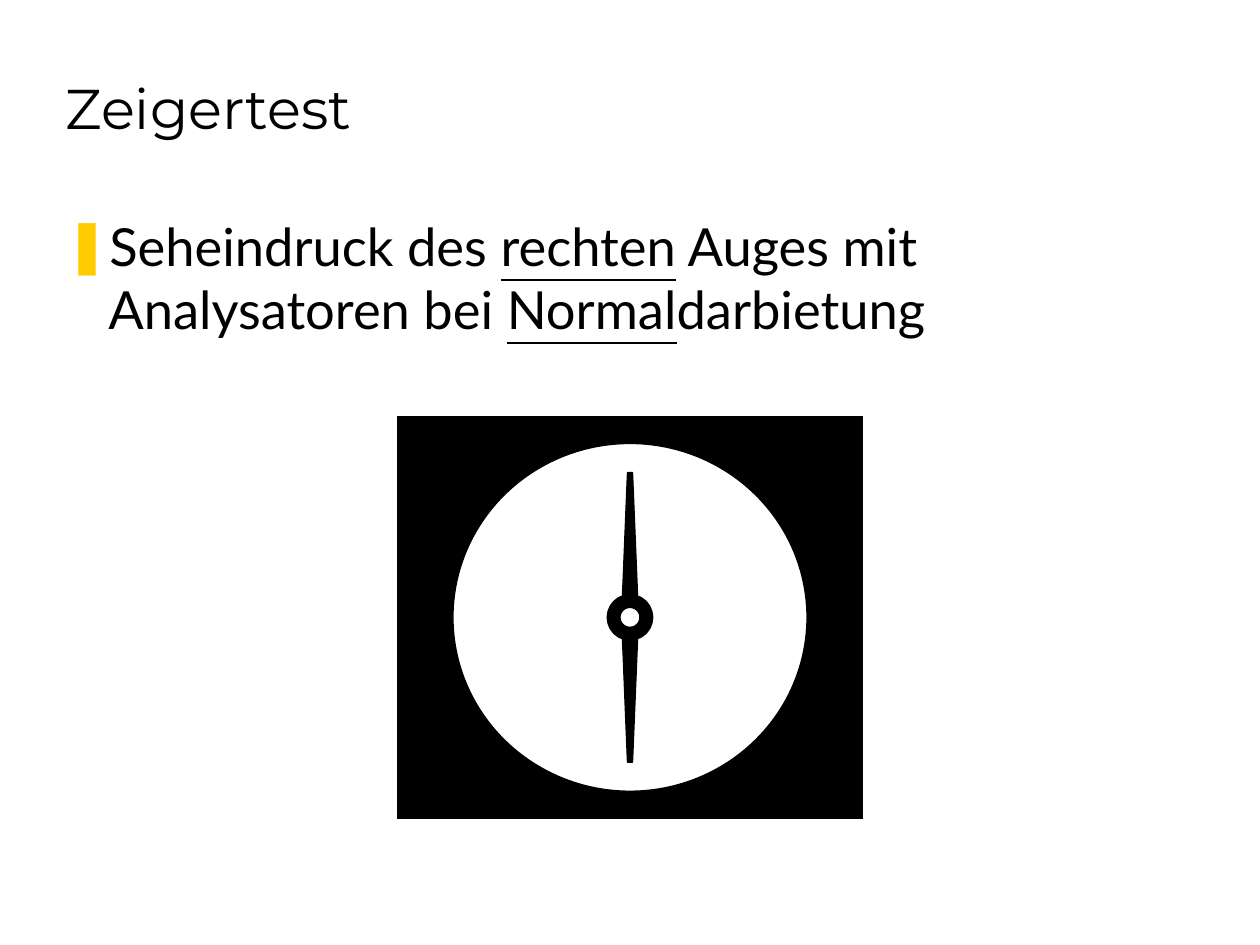
from typing import NamedTuple

from lxml.etree import SubElement
from pptx import Presentation
from pptx.dml.color import RGBColor
from pptx.enum.shapes import MSO_SHAPE as Preset
from pptx.enum.text import MSO_ANCHOR as Anchor, MSO_AUTO_SIZE as AutoSize, PP_ALIGN as Align
from pptx.oxml.ns import qn
from pptx.util import Inches, Pt

COLORS = {"black": "000000", "white": "FFFFFF", "yellow": "FFCC00"}
CENTER_X, CENTER_Y = 5, 4.9

# Upper right quarter of the dial's surround, as offsets from the dial centre
QUARTER = [
    (1.85, 0.01), (1.85, -1.6), (0, -1.6), (0, -1.2), (0.14, -1.19),
    (0.26, -1.17), (0.35, -1.15), (0.45, -1.13), (0.58, -1.09),
    (0.71, -1.03), (0.88, -0.92), (1, -0.81), (1.12, -0.7), (1.2, -0.58),
    (1.3, -0.41), (1.37, -0.21), (1.39, -0.09), (1.39, 0.01),
]
# Upper half of the pointer
NEEDLE = [(-0.06, -0.17), (-0.02, -1.15), (0.02, -1.15), (0.06, -0.17)]


class Outline(NamedTuple):
    preset: Preset
    width: float
    height: float
    fill: str | None
    line: str
    line_width: float


DIAL = Outline(Preset.OVAL, 2.81, 2.76, "white", "black", 0.75)
HUB = Outline(Preset.OVAL, 0.26, 0.26, None, "black", 8)
BORDER = Outline(Preset.RECTANGLE, 3.71, 3.21, None, "white", 0.75)


def color(name: str) -> RGBColor:
    return RGBColor.from_string(COLORS[name])


def style_shape(shape, fill: str | None, line: str, line_width: float) -> None:
    shape.shadow.inherit = False
    if fill:
        shape.fill.solid()
        shape.fill.fore_color.rgb = color(fill)
    else:
        shape.fill.background()
    shape.line.color.rgb = color(line)
    shape.line.width = Pt(line_width)


def add_centered(shapes, outline: Outline) -> None:
    shape = shapes.add_shape(
        outline.preset,
        Inches(CENTER_X - outline.width / 2), Inches(CENTER_Y - outline.height / 2),
        Inches(outline.width), Inches(outline.height),
    )
    style_shape(shape, outline.fill, outline.line, outline.line_width)


def add_mirrored(shapes, offsets: list[tuple[float, float]], sign_x: int, sign_y: int) -> None:
    """Add a black polygon, flipped about the dial centre by the signs."""
    points = [(Inches(CENTER_X + sign_x * x), Inches(CENTER_Y + sign_y * y)) for x, y in offsets]
    builder = shapes.build_freeform(*points[0])
    builder.add_line_segments(points[1:], close=True)
    style_shape(builder.convert_to_shape(), "black", "black", 0.75)


def place(shape, left: float, top: float, width: float, height: float) -> None:
    shape.left, shape.top = Inches(left), Inches(top)
    shape.width, shape.height = Inches(width), Inches(height)


def add_run(paragraph, text: str, font: str, size: float, underline: bool = False) -> None:
    run = paragraph.add_run()
    run.text = text
    run.font.name = font
    run.font.size = Pt(size)
    run.font.underline = underline
    run.font.color.rgb = color("black")


def set_bullet(paragraph, character: str, color_name: str, indent: float) -> None:
    properties = paragraph._p.get_or_add_pPr()
    properties.set("marL", str(Inches(indent)))
    properties.set("indent", str(-Inches(indent)))
    bullet_color = SubElement(properties, qn("a:buClr"))
    SubElement(bullet_color, qn("a:srgbClr"), val=COLORS[color_name])
    SubElement(properties, qn("a:buChar"), char=character)


def fill_title(title) -> None:
    place(title, 0.42, 0.24, 9.16, 0.9)
    frame = title.text_frame
    frame.vertical_anchor = Anchor.BOTTOM
    frame.margin_bottom = Inches(0.02)
    frame.auto_size = AutoSize.NONE
    paragraph = frame.paragraphs[0]
    paragraph.alignment = Align.LEFT
    add_run(paragraph, "Zeigertest", "Montserrat", 32)


def fill_body(body) -> None:
    place(body, 0.42, 1.65, 9.17, 1.1)
    frame = body.text_frame
    frame.auto_size = AutoSize.SHAPE_TO_FIT_TEXT
    paragraph = frame.paragraphs[0]
    paragraph.space_before = Pt(0)
    set_bullet(paragraph, "❚", "yellow", 0.34)
    for text, underline in [
        ("Seheindruck des ", False),
        ("rechten", True),
        (" Auges mit Analysatoren bei ", False),
        ("Normal", True),
        ("darbietung", False),
    ]:
        add_run(paragraph, text, "Lato", 30, underline)


def draw_dial(shapes) -> None:
    surround = shapes.add_group_shape()
    for sign_y in (1, -1):
        for sign_x in (-1, 1):
            add_mirrored(surround.shapes, QUARTER, sign_x, sign_y)
    for outline in (DIAL, HUB, BORDER):
        add_centered(shapes, outline)
    for sign_y in (-1, 1):
        add_mirrored(shapes, NEEDLE, 1, sign_y)


def main() -> None:
    presentation = Presentation()
    presentation.slide_width, presentation.slide_height = Inches(10), Inches(7.5)
    slide = presentation.slides.add_slide(presentation.slide_layouts[1])
    fill_title(slide.shapes.title)
    fill_body(slide.placeholders[1])
    draw_dial(slide.shapes)
    presentation.save("out.pptx")


if __name__ == "__main__":
    main()
